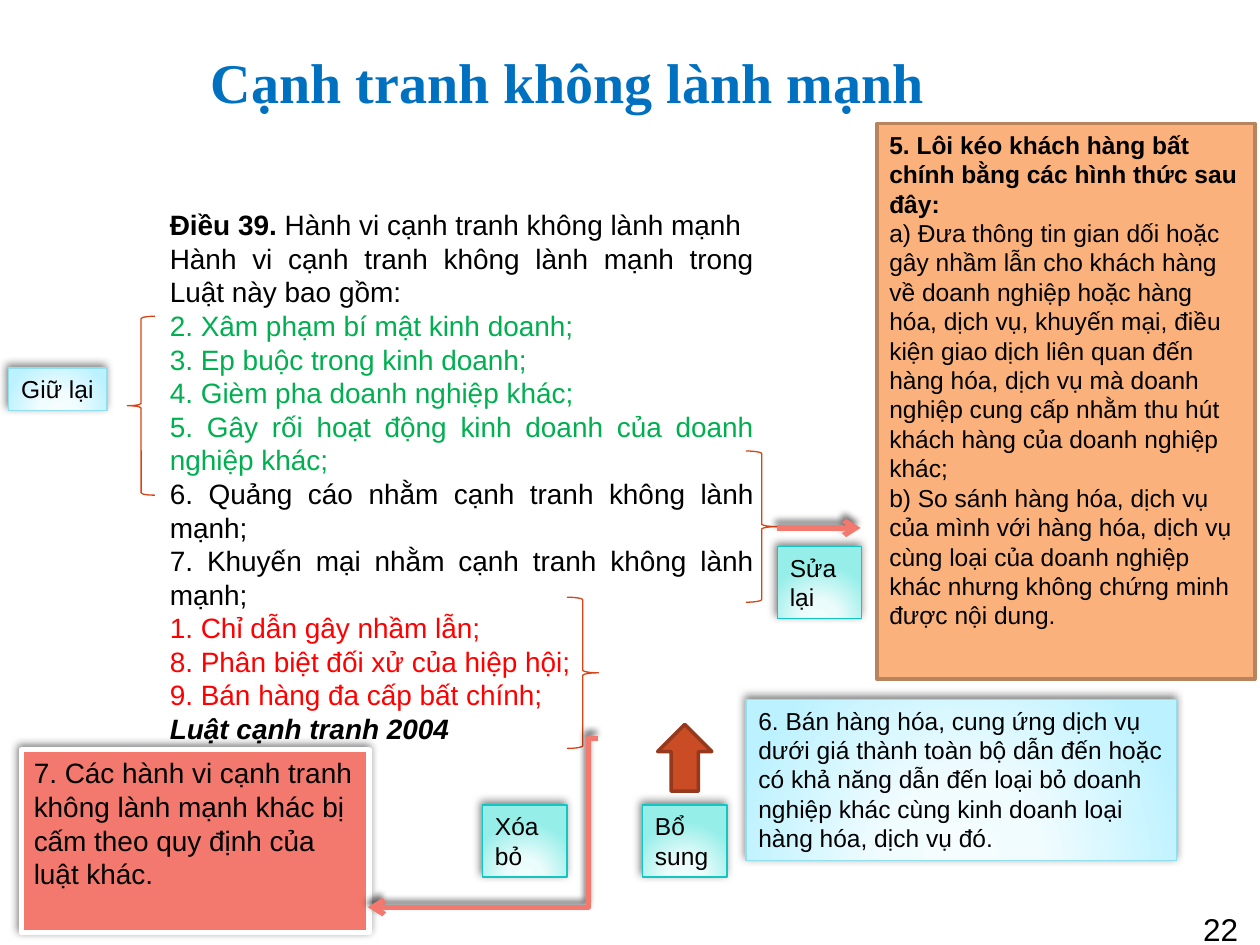
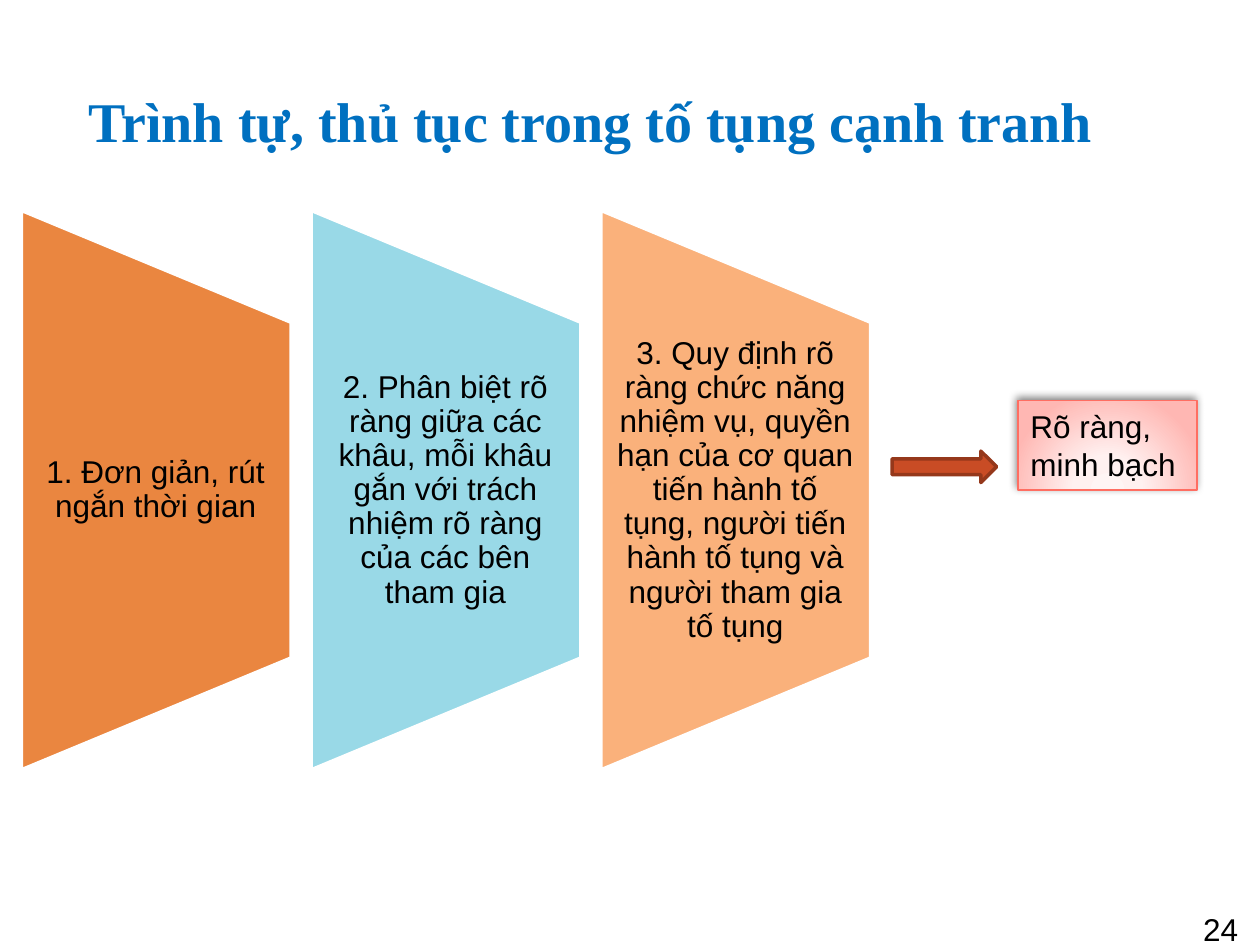
import pptx
import pptx.util
import pptx.dml.color
import pptx.enum.shapes
import pptx.enum.text
import pptx.oxml
import pptx.oxml.ns
from lxml import etree
from dataclasses import dataclass

Inches = pptx.util.Inches
Pt = pptx.util.Pt
RGB = pptx.dml.color.RGBColor.from_string
Kind = pptx.enum.shapes.MSO_SHAPE
Link = pptx.enum.shapes.MSO_CONNECTOR
Align = pptx.enum.text.PP_ALIGN
Anchor = pptx.enum.text.MSO_ANCHOR
Fit = pptx.enum.text.MSO_AUTO_SIZE
qn = pptx.oxml.ns.qn
NS = 'xmlns:a="http://schemas.openxmlformats.org/drawingml/2006/main"'


@dataclass(frozen=True)
class Theme:
    head: str = "Times New Roman"
    body: str = "Arial"
    title: int = 32
    large: int = 18
    mid: int = 16
    small: int = 14
    blue: str = "0070C0"
    black: str = "000000"
    white: str = "FFFFFF"
    green: str = "00B050"
    red: str = "FF0000"
    coral: str = "F3786E"
    peach: str = "FAB17B"
    tan: str = "B9835B"
    orange: str = "EA8640"
    sky: str = "99D9E7"
    brace: str = "D94315"
    rust: str = "C94C25"
    dark: str = "95381B"
    # Glow styles: inner, middle and outer colour, then the line
    ice: tuple = ("F5FDFF", "F1FCFF", "BCF2FF", "91DEEF")
    mint: tuple = ("EEFEFD", "EAFCFB", "96EEE9", "12C7C1")
    rose: tuple = ("FFF5F4", "FFF1F0", "FFB7B3", "FF6E62")


T = Theme()


def write(frame, paras, size, align=Align.LEFT, font=T.body):
    """Fill a frame; each paragraph is a list of (text, colour, bold, italic)."""
    frame.word_wrap = True
    for i, runs in enumerate(paras):
        para = frame.paragraphs[0] if i == 0 else frame.add_paragraph()
        para.alignment = align
        for text, color, bold, slant in runs:
            run = para.add_run()
            run.text = text
            run.font.name = font
            run.font.size = Pt(size)
            run.font.bold = bold
            run.font.italic = slant
            run.font.color.rgb = RGB(color)


def draw(slide, kind, at, fill, line, width, shade=None):
    """Add a shape or connector; a tuple fill is a glow, shade is (alpha, blur, gap)."""
    spots = [Inches(n) for n in at]
    joined = kind in (Link.STRAIGHT, Link.ELBOW)
    if joined and fill is None:
        item = slide.shapes.add_connector(kind, *spots)
    else:
        item = slide.shapes.add_shape(kind, *spots)
    props = item._element.spPr
    item.line.color.rgb = RGB(line)
    item.line.width = Pt(width)
    if isinstance(item, pptx.shapes.connector.Connector):
        etree.SubElement(item.line._get_or_add_ln(), qn("a:tailEnd"), type="arrow")
        effects = etree.SubElement(props, qn("a:effectLst"))
    else:
        item.shadow.inherit = False
        effects = props.find(qn("a:effectLst"))
        item.fill.background()
        if isinstance(fill, tuple):
            stops = "".join(
                f'<a:gs pos="{pos}"><a:srgbClr val="{tone}"/></a:gs>'
                for pos, tone in zip((0, 34000, 100000), fill))
            glow = pptx.oxml.parse_xml(
                f'<a:gradFill {NS} rotWithShape="1"><a:gsLst>{stops}</a:gsLst>'
                '<a:path path="circle"><a:fillToRect l="110000" t="250000" '
                'r="110000" b="40000"/></a:path></a:gradFill>')
            props.replace(props.find(qn("a:noFill")), glow)
        elif fill != "none":
            item.fill.solid()
            item.fill.fore_color.rgb = RGB(fill)
    if shade:
        alpha, blur, gap = shade
        effects.append(pptx.oxml.parse_xml(
            f'<a:outerShdw {NS} blurRad="{Pt(blur)}" dist="{Pt(gap)}" '
            f'dir="{245 * 60000}" algn="tl" rotWithShape="0">'
            f'<a:srgbClr val="{T.black}"><a:alpha val="{alpha * 1000}"/></a:srgbClr>'
            '</a:outerShdw>'))
    return item


SOFT = (50, 5, 2)
HARD = (60, 4, 3)

deck = pptx.Presentation()
deck.slide_width = Inches(10)
deck.slide_height = Inches(7.5)

# Titles and page numbers
heads = [
    ("Cạnh tranh không lành mạnh", (0.69, 0.27, 7.63, 0.74), Align.CENTER, "22"),
    ("Trình tự, thủ tục trong tố tụng cạnh tranh", (0.5, 0.58, 9, 0.74), Align.LEFT, "24"),
]
slides = []
for text, at, align, page in heads:
    slide = deck.slides.add_slide(deck.slide_layouts[5])
    slides.append(slide)
    title = slide.shapes.title
    title.left, title.top, title.width, title.height = [Inches(n) for n in at]
    frame = title.text_frame
    frame.auto_size = Fit.NONE
    frame.vertical_anchor = Anchor.MIDDLE
    frame.margin_left = frame.margin_right = 0
    write(frame, [[(text, T.blue, True, False)]], T.title, align, T.head)
    num = slide.shapes.add_textbox(*[Inches(n) for n in (9.45, 7.17, 0.55, 0.33)])
    write(num.text_frame, [[(page, T.black, False, False)]], T.large)
acts, steps = slides
steps.shapes.title.text_frame.paragraphs[0]._p.get_or_add_pPr().set("marL", str(Inches(0.2)))
steps.shapes.title.text_frame.paragraphs[0]._p.get_or_add_pPr().set("indent", "0")

# Slide 1: text of the article
law = acts.shapes.add_textbox(*[Inches(n) for n in (1.25, 1.6, 4.83, 4.41)])
lines = [
    (T.black, "Hành vi cạnh tranh không lành mạnh trong Luật này bao gồm:"),
    (T.green, "2. Xâm phạm bí mật kinh doanh;"),
    (T.green, "3. Ep buộc trong kinh doanh;"),
    (T.green, "4. Gièm pha doanh nghiệp khác;"),
    (T.green, "5. Gây rối hoạt động kinh doanh của doanh nghiệp khác;"),
    (T.black, "6. Quảng cáo nhằm cạnh tranh không lành mạnh;"),
    (T.black, "7. Khuyến mại nhằm cạnh tranh không lành mạnh; "),
    (T.red, "1. Chỉ dẫn gây nhầm lẫn;"),
    (T.red, "8. Phân biệt đối xử của hiệp hội;"),
    (T.red, "9. Bán hàng đa cấp bất chính;"),
]
paras = [[("Điều 39.", T.black, True, False),
          (" Hành vi cạnh tranh không lành mạnh", T.black, False, False)]]
paras += [[(text, color, False, False)] for color, text in lines]
paras += [[("Luật cạnh tranh 2004", T.black, True, True)]]
write(law.text_frame, paras, T.mid, Align.JUSTIFY)
law.text_frame.paragraphs[-1].alignment = Align.LEFT

# Boxes on both slides; the first paragraph of a pair is bold
boxes = [
    (acts, (5.92, 5.55, 3.42, 1.28), T.ice[:3], T.ice[3], 0.75, SOFT, T.small,
     ["6. Bán hàng hóa, cung ứng dịch vụ dưới giá thành toàn bộ dẫn đến hoặc có khả năng "
      "dẫn đến loại bỏ doanh nghiệp khác cùng kinh doanh loại hàng hóa, dịch vụ đó."]),
    (acts, (0.07, 2.92, 0.78, 0.34), T.ice[:3], T.ice[3], 0.75, SOFT, T.small, ["Giữ lại"]),
    (acts, (6.96, 0.98, 3, 4.41), T.peach, T.tan, 2, None, T.small,
     ["5. Lôi kéo khách hàng bất chính bằng các hình thức sau đây:",
      "a) Đưa thông tin gian dối hoặc gây nhầm lẫn cho khách hàng về doanh nghiệp hoặc "
      "hàng hóa, dịch vụ, khuyến mại, điều kiện giao dịch liên quan đến hàng hóa, dịch vụ "
      "mà doanh nghiệp cung cấp nhằm thu hút khách hàng của doanh nghiệp khác;",
      "b) So sánh hàng hóa, dịch vụ của mình với hàng hóa, dịch vụ cùng loại của doanh "
      "nghiệp khác nhưng không chứng minh được nội dung."]),
    (acts, (0.17, 5.95, 2.76, 1.45), T.coral, T.white, 3, SOFT, T.mid,
     ["7. Các hành vi cạnh tranh không lành mạnh khác bị cấm theo quy định của luật khác."]),
    (steps, (8.08, 3.18, 1.42, 0.71), T.rose[:3], T.rose[3], 0.75, SOFT, T.large,
     ["Rõ ràng, minh bạch"]),
]
for text, left, top in [("Bổ sung", 5.1, 6.39), ("Sửa lại", 6.17, 4.34), ("Xóa bỏ", 3.83, 6.39)]:
    boxes.append((acts, (left, top, 0.67, 0.57), T.mint[:3], T.mint[3], 0.75, SOFT,
                  T.small, [text]))
for slide, at, fill, line, width, shade, size, texts in boxes:
    box = draw(slide, Kind.RECTANGLE, at, fill, line, width, shade)
    frame = box.text_frame
    frame.vertical_anchor = Anchor.TOP
    write(frame, [[(text, T.black, len(texts) > 1 and i == 0, False)]
                  for i, text in enumerate(texts)], size)
    frame.word_wrap = texts != ["Giữ lại"]
    frame.auto_size = Fit.SHAPE_TO_FIT_TEXT

# Braces
for kind, at in [(Kind.LEFT_BRACE, (1.01, 2.51, 0.22, 1.42)),
                 (Kind.RIGHT_BRACE, (5.92, 3.58, 0.25, 1.2)),
                 (Kind.RIGHT_BRACE, (4.5, 4.74, 0.25, 1.2))]:
    draw(acts, kind, at, "none", T.brace, 0.75)

# Arrows
draw(acts, Link.STRAIGHT, (6.17, 4.19, 6.83, 4.19), None, T.coral, 3, HARD)
bent = draw(acts, Link.ELBOW, (4.75, 5.86, 2.92, 7.2), None, T.coral, 3, HARD)
guides = bent._element.spPr.find(qn("a:prstGeom")).find(qn("a:avLst"))
etree.SubElement(guides, qn("a:gd"), name="adj1", fmla="val 4400")
draw(acts, Kind.UP_ARROW, (5.22, 5.75, 0.43, 0.53), T.rust, T.dark, 2)
draw(steps, Kind.RIGHT_ARROW, (7.08, 3.58, 0.83, 0.25), T.rust, T.dark, 2)

# Slide 2: three steps, each a turned panel with its text
panels = [
    (T.orange, "1. Đơn giản, rút ngắn thời gian"),
    (T.sky, "2. Phân biệt rõ ràng giữa các khâu, mỗi khâu gắn với trách nhiệm rõ ràng "
            "của các bên tham gia"),
    (T.peach, "3. Quy định rõ ràng chức năng nhiệm vụ, quyền hạn của cơ quan tiến hành "
              "tố tụng, người tiến hành tố tụng và người tham gia tố tụng"),
]
for i, (color, text) in enumerate(panels):
    left = 0.17 + 2.3 * i
    panel = draw(steps, Kind.FLOWCHART_MANUAL_OPERATION, (left - 1.15, 2.82, 4.44, 2.14),
                 color, T.white, 2)
    panel.rotation = 270
    label = steps.shapes.add_textbox(*[Inches(n) for n in (left, 2.56, 2.14, 2.67)])
    frame = label.text_frame
    frame.vertical_anchor = Anchor.MIDDLE
    frame.margin_left, frame.margin_right = Inches(0.12), Inches(0.13)
    frame.margin_top = frame.margin_bottom = 0
    write(frame, [[(text, T.black, False, False)]], T.large, Align.CENTER)
    frame.paragraphs[0].line_spacing = 0.9

deck.save("out.pptx")
